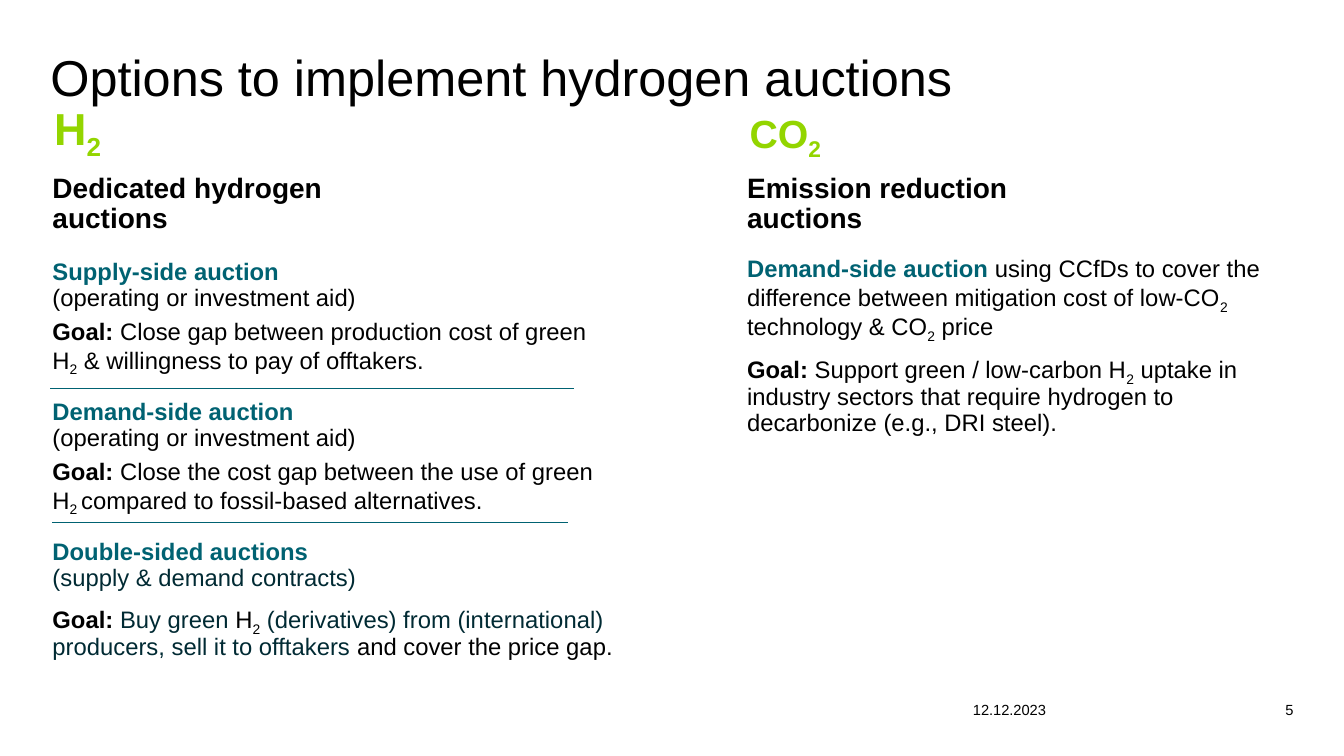
from pptx import Presentation
from pptx.dml.color import RGBColor
from pptx.enum.shapes import MSO_CONNECTOR
from pptx.enum.text import MSO_ANCHOR, PP_ALIGN
from pptx.oxml.ns import qn
from pptx.util import Inches, Pt
from lxml import etree

STRAIGHT = MSO_CONNECTOR.STRAIGHT
TOP, BOTTOM = MSO_ANCHOR.TOP, MSO_ANCHOR.BOTTOM
LEFT, CENTER, RIGHT = PP_ALIGN.LEFT, PP_ALIGN.CENTER, PP_ALIGN.RIGHT
BLACK = RGBColor(0x00, 0x00, 0x00)
TEAL = RGBColor(0x00, 0x62, 0x72)
NAVY = RGBColor(0x00, 0x2A, 0x33)
GREEN = RGBColor(0x93, 0xD5, 0x00)

STYLES = {
    "plain": {},
    "bold": {"bold": True},
    "sub": {"sub": True},
    "boldsub": {"bold": True, "sub": True},
    "teal": {"bold": True, "color": TEAL},
    "navy": {"color": NAVY},
    "symbol": {"bold": True, "color": GREEN},
    "symbolsub": {"bold": True, "color": GREEN, "sub": True},
}

HYDROGEN = [
    (20, 0, 6, [("Dedicated hydrogen\nauctions", "bold")]),
    (17, 12, 0, [("Supply-side auction\n", "teal"), ("(operating or investment aid)", "plain")]),
    (17, 6, 12, [("Goal: ", "bold"),
                 ("Close gap between production cost of green H", "plain"), ("2", "sub"),
                 (" & willingness to pay of offtakers.", "plain")]),
    (17, 6, 0, [("Demand-side auction\n", "teal"), ("(operating or investment aid)", "plain")]),
    (17, 6, 12, [("Goal: ", "bold"),
                 ("Close the cost gap between the use of green H", "plain"), ("2 ", "sub"),
                 ("compared to fossil-based alternatives.", "plain")]),
    (17, 6, 0, [("Double-sided auctions\n", "teal"), ("(supply & demand contracts)", "navy")]),
    (17, 10, 12, [("Goal: ", "bold"), ("Buy green ", "navy"), ("H", "plain"), ("2", "sub"),
                  (" (derivatives) from (international) producers, sell it to offtakers ", "navy"),
                  ("and cover the price gap.", "plain")]),
]
EMISSIONS = [
    (20, 0, 6, [("Emission reduction\nauctions", "bold")]),
    (17, 10, 0, [("Demand-side auction ", "teal"),
                 ("using CCfDs to cover the difference between mitigation cost of low-CO", "plain"),
                 ("2", "sub"), (" technology & CO", "plain"), ("2", "sub"), (" price", "plain")]),
    (17, 10, 0, [("Goal: ", "bold"), ("Support green / low-carbon H", "plain"), ("2", "sub"),
                 (" uptake in industry sectors that require hydrogen to decarbonize"
                  " (e.g., DRI steel).", "plain")]),
]
TITLE = [(36, 0, 0, [("Options to implement hydrogen auctions", "plain")])]
DATE = [(10.5, 0, 0, [("12.12.2023", "plain")])]
NUMBER = [(10.5, 0, 0, [("5", "plain")])]
H2 = [(32, 0, 0, [("H", "symbol"), ("2", "symbolsub")])]
CO2 = [(28, 0, 0, [("CO", "symbol"), ("2", "symbolsub")])]

BOXES = [
    ((0.5, 0.5, 12.33, 0.57), TITLE, LEFT, 0.9, BOTTOM),
    ((0.52, 1.73, 5.61, 2.89), HYDROGEN, LEFT, 0.9, TOP),
    ((7.41, 1.73, 5.53, 2.89), EMISSIONS, LEFT, 0.9, TOP),
    ((9.65, 6.95, 1.93, 0.27), DATE, LEFT, 1.0, TOP),
    ((12.42, 6.95, 0.41, 0.27), NUMBER, RIGHT, 1.0, TOP),
    ((0.39, 1.33, 0.76, 0.31), H2, CENTER, Pt(19.6), TOP),
    ((7.41, 1.34, 0.76, 0.3), CO2, CENTER, Pt(19.6), TOP),
]
DIVIDERS = [(0.5, 5.69, 3.85), (0.52, 5.63, 5.18)]


def add_text(p, text, size, bold=False, color=BLACK, sub=False):
    for i, line in enumerate(text.split("\n")):
        if i:
            p.add_line_break()
        if line:
            r = p.add_run()
            r.text = line
            for name, value in {"name": "Arial", "size": Pt(size), "bold": bold}.items():
                setattr(r.font, name, value)
            r.font.color.rgb = color
            if sub:
                r.font._element.set("baseline", "-25000")


def add_box(s, at, paragraphs, align, spacing, anchor):
    tf = s.shapes.add_textbox(*map(Inches, at)).text_frame
    frame = {"word_wrap": True, "vertical_anchor": anchor, "margin_left": 0,
             "margin_top": 0, "margin_right": 0, "margin_bottom": 0}
    for name, value in frame.items():
        setattr(tf, name, value)
    for i, (size, before, after, runs) in enumerate(paragraphs):
        p = tf.add_paragraph() if i else tf.paragraphs[0]
        layout = {"alignment": align, "line_spacing": spacing,
                  "space_before": Pt(before), "space_after": Pt(after)}
        for name, value in layout.items():
            setattr(p, name, value)
        p.font.size = Pt(size)
        for text, style in runs:
            add_text(p, text, size, **STYLES[style])


def add_divider(s, left, right, y):
    line = s.shapes.add_connector(STRAIGHT, Inches(left), Inches(y), Inches(right), Inches(y))
    line.line.color.rgb = TEAL
    line.line.width = Pt(0.5)
    etree.SubElement(line._element.spPr, qn("a:effectLst"))


def main():
    prs = Presentation()
    prs.slide_width, prs.slide_height = Inches(13.33), Inches(7.5)
    s = prs.slides.add_slide(prs.slide_layouts[6])
    for box in BOXES:
        add_box(s, *box)
    for divider in DIVIDERS:
        add_divider(s, *divider)
    prs.save("out.pptx")


if __name__ == "__main__":
    main()
